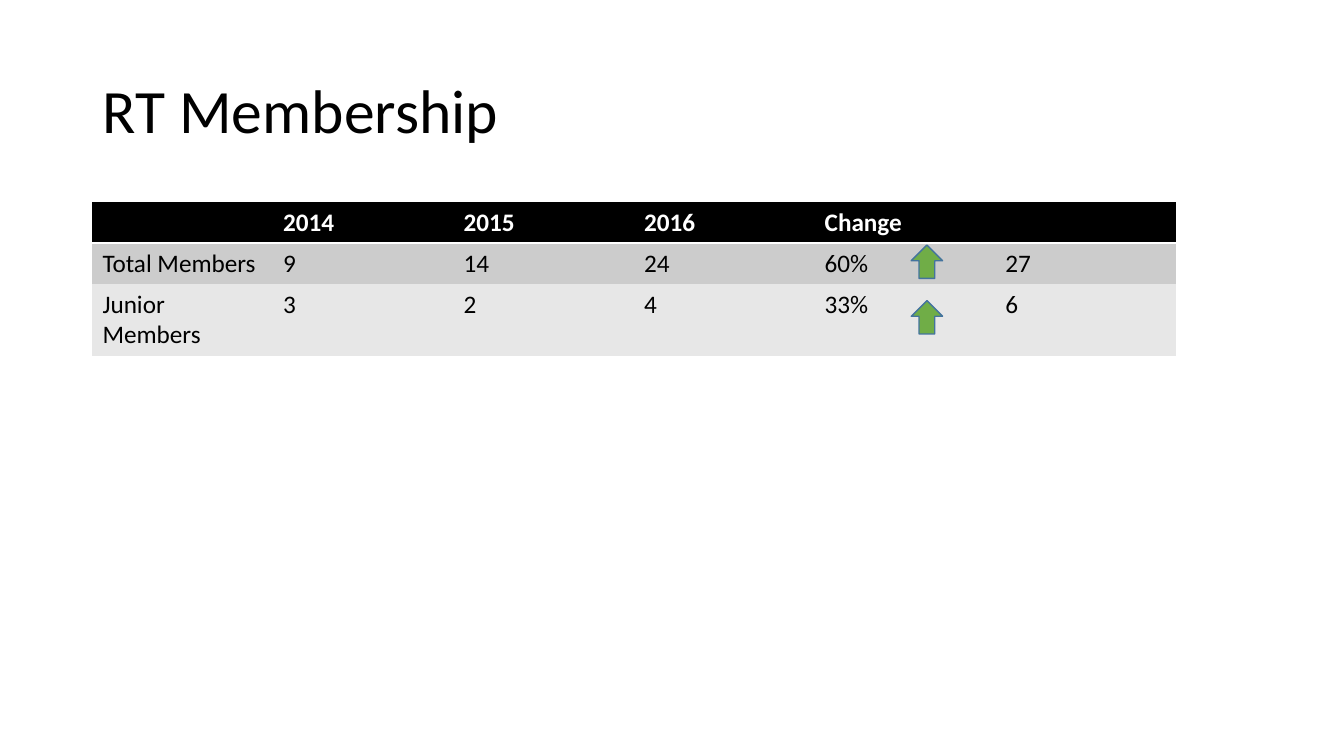
from lxml.etree import SubElement
from pptx import Presentation
from pptx.dml.color import RGBColor as Rgb
from pptx.enum.shapes import MSO_SHAPE as Shape
from pptx.enum.text import MSO_ANCHOR as Anchor, PP_ALIGN as Align
from pptx.oxml import parse_xml
from pptx.oxml.ns import nsdecls, qn
from pptx.util import Cm, Pt

COLORS = {
    "black": "000000", "white": "FFFFFF", "dark": "CCCCCC",
    "light": "E7E7E7", "green": "70AD47", "blue": "43739E",
}
PLAIN = "{2D5ABB26-0587-4C30-8999-92F81FD0307C}"
ROWS = [
    ["", "2014", "2015", "2016", "Change", ""],
    ["Total Members", "9", "14", "24", "60%", "27"],
    ["Junior Members", "3", "2", "4", "33%", "6"],
]
LOOKS = [("black", "white", True), ("dark", "black", False), ("light", "black", False)]


class Deck:
    """Hold the style and the current slide."""

    def __init__(self):
        """Start a wide deck with one title-only slide."""
        self.font = "Calibri"
        self.deck = Presentation()
        self.deck.slide_width, self.deck.slide_height = Cm(33.87), Cm(19.05)
        self.slide = self.deck.slides.add_slide(self.deck.slide_layouts[5])

    def paint(self, fill, color):
        """Give a fill one solid colour."""
        fill.solid()
        fill.fore_color.rgb = Rgb.from_string(COLORS[color])

    def style(self, frame, size, color, bold=False):
        """Format every run in a text frame."""
        for para in frame.paragraphs:
            for run in para.runs:
                run.font.name, run.font.size, run.font.bold = self.font, Pt(size), bold
                run.font.color.rgb = Rgb.from_string(COLORS[color])

    def title(self, text, left, top, width, height):
        """Place and fill the title."""
        box = self.slide.shapes.title
        box.left, box.top, box.width, box.height = Cm(left), Cm(top), Cm(width), Cm(height)
        frame = box.text_frame
        frame.text = text
        frame.word_wrap = True
        frame.vertical_anchor = Anchor.MIDDLE
        frame.paragraphs[0].alignment = Align.LEFT
        frame.paragraphs[0].line_spacing = 0.9
        self.style(frame, 44, "black")

    def rule(self, cell):
        """Draw a white line under a cell."""
        line = parse_xml(f'<a:lnB {nsdecls("a")} w="{Pt(2)}"/>')
        fill = SubElement(line, qn("a:solidFill"))
        SubElement(fill, qn("a:srgbClr"), val=COLORS["white"])
        cell.fill.background()
        cell._tc.tcPr.insert(0, line)

    def table(self, rows, left, top, width, height):
        """Add the table with its header line."""
        frame = self.slide.shapes.add_table(
            len(rows), len(rows[0]), Cm(left), Cm(top), Cm(width), Cm(height))
        grid = frame.table
        grid._tbl.tblPr.find(qn("a:tableStyleId")).text = PLAIN
        for r, (row, (fill, color, bold)) in enumerate(zip(rows, LOOKS)):
            for c, text in enumerate(row):
                cell = grid.cell(r, c)
                cell.text_frame.text = text
                self.style(cell.text_frame, 18, color, bold)
                if r == 0:
                    self.rule(cell)
                self.paint(cell.fill, fill)

    def arrow(self, left, top, width, height):
        """Add an arrow that points up."""
        shape = self.slide.shapes.add_shape(
            Shape.RIGHT_ARROW, Cm(left), Cm(top), Cm(width), Cm(height))
        shape.rotation = 270
        shape.shadow.inherit = False
        self.paint(shape.fill, "green")
        self.paint(shape.line.fill, "blue")
        shape.line.width = Pt(1)

    def save(self):
        """Write the deck."""
        self.deck.save("out.pptx")


def main():
    """Build the membership slide."""
    deck = Deck()
    deck.title("RT Membership", 2.33, 1.01, 29.21, 3.68)
    deck.table(ROWS, 2.33, 5.1, 27.3, 3.09)
    for top in (6.2, 7.6):
        deck.arrow(22.94, top, 0.84, 0.79)
    deck.save()


if __name__ == "__main__":
    main()
